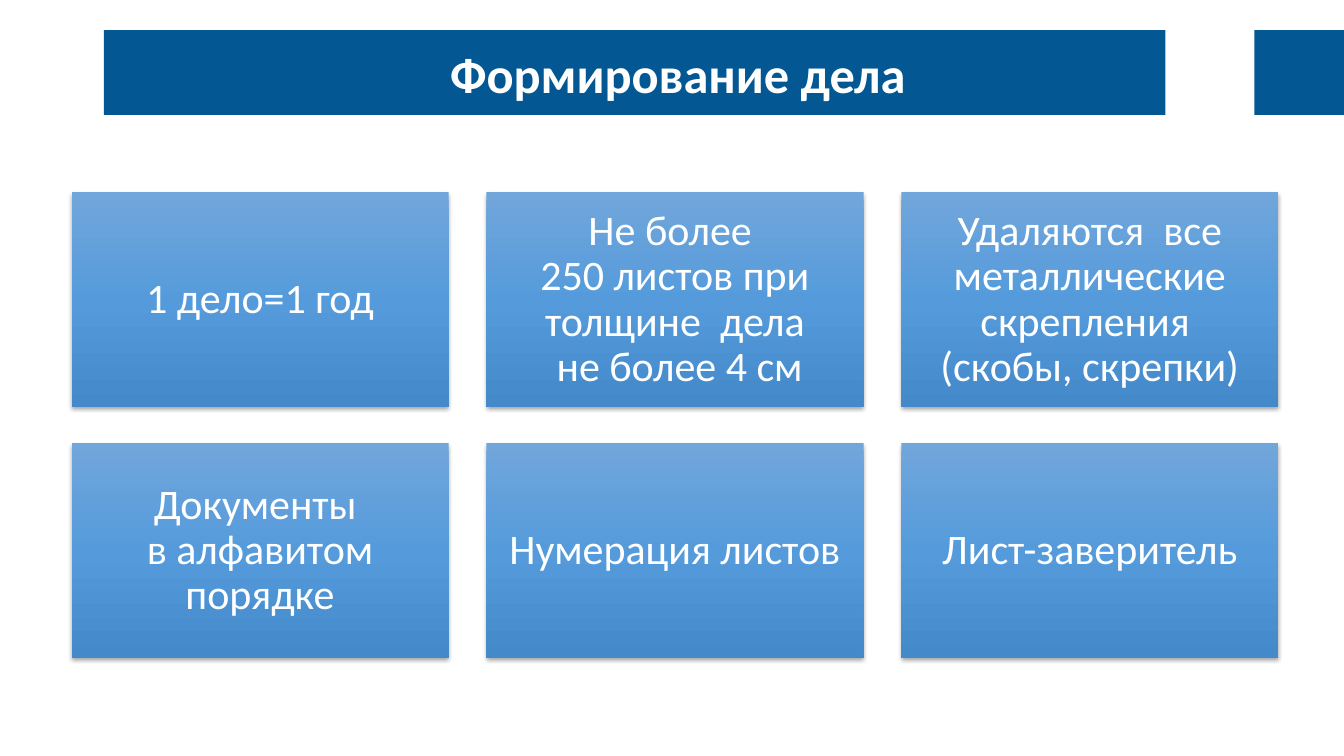
from copy import deepcopy
from dataclasses import dataclass

from pptx import Presentation
from pptx import util as u
from pptx.dml.color import RGBColor
from pptx.enum import shapes, text
from pptx.oxml import parse_xml
from pptx.oxml.ns import nsdecls, qn
from pptx.shapes.autoshape import Shape
from pptx.slide import Slide
from pptx.text.text import TextFrame

FONT = "Calibri"
WHITE = "FFFFFF"
BANNER_BLUE = "035793"
CARD_GRADIENT = [(0, "71A6DB"), (0.5, "559BDB"), (1, "448ACA")]

# Card grid
COLUMNS = 3
CARD_WIDTH, CARD_HEIGHT = 3.74, 2.13
GRID_LEFT, GRID_TOP = 0.71, 1.91
COLUMN_STEP, ROW_STEP = 4.115, 2.49
CARD_TEXTS = [
    "1 дело=1 год",
    "Не более \v250 листов при толщине  дела\v не более 4 см",
    "Удаляются  все металлические скрепления \v(скобы, скрепки)",
    "Документы \vв алфавитом порядке",
    "Нумерация листов",
    "Лист-заверитель",
]


@dataclass
class Box:
    left: float
    top: float
    width: float
    height: float

    def lengths(self) -> list[u.Length]:
        return [u.Inches(value) for value in (self.left, self.top, self.width, self.height)]


BANNERS = [Box(1.03, 0.3, 10.53, 0.84), Box(12.44, 0.3, 0.89, 0.84)]
TITLE = Box(1.91, 0.3, 9.63, 0.85)


def color(value: str) -> RGBColor:
    return RGBColor.from_string(value)


def add_rectangle(slide: Slide, box: Box) -> Shape:
    shape = slide.shapes.add_shape(shapes.MSO_SHAPE.RECTANGLE, *box.lengths())
    shape.shadow.inherit = False
    shape.line.fill.background()
    return shape


def write_text(frame: TextFrame, content: str, size: float, bold: bool = False) -> None:
    frame.text = content
    frame.word_wrap = True
    frame.auto_size = text.MSO_AUTO_SIZE.NONE
    frame.vertical_anchor = text.MSO_ANCHOR.MIDDLE
    paragraph = frame.paragraphs[0]
    paragraph.alignment = text.PP_ALIGN.CENTER
    for run in paragraph.runs:
        run.font.name = FONT
        run.font.size = u.Pt(size)
        run.font.bold = bold
        run.font.color.rgb = color(WHITE)


def fill_gradient(shape: Shape) -> None:
    shape.fill.gradient()
    stop_list = shape._element.spPr.find(".//" + qn("a:gsLst"))
    stop_list.append(deepcopy(stop_list[0]))
    for stop, (position, value) in zip(shape.fill.gradient_stops, CARD_GRADIENT):
        stop.position = position
        stop.color.rgb = color(value)
    shape.fill.gradient_angle = 270


def add_shadow(shape: Shape) -> None:
    effects = shape._element.spPr.find(qn("a:effectLst"))
    effects.append(parse_xml(
        f'<a:outerShdw {nsdecls("a")} blurRad="{u.Pt(3.1)}" dist="{u.Pt(1.8)}" '
        'dir="5400000" rotWithShape="0"><a:srgbClr val="000000">'
        '<a:alpha val="35000"/></a:srgbClr></a:outerShdw>'))


def add_card(slide: Slide, box: Box, content: str) -> None:
    card = add_rectangle(slide, box)
    fill_gradient(card)
    add_shadow(card)
    frame = card.text_frame
    write_text(frame, content, 30)
    frame.margin_left = frame.margin_right = u.Inches(0.13)
    frame.margin_top = frame.margin_bottom = u.Inches(0.13)
    frame.paragraphs[0].line_spacing = 0.9
    frame.paragraphs[0].space_after = u.Pt(10.5)


def main() -> None:
    presentation = Presentation()
    presentation.slide_width = u.Inches(13.33)
    presentation.slide_height = u.Inches(7.5)
    slide = presentation.slides.add_slide(presentation.slide_layouts[5])

    # Banner blocks
    for box in BANNERS:
        banner = add_rectangle(slide, box)
        banner.fill.solid()
        banner.fill.fore_color.rgb = color(BANNER_BLUE)

    # Title, brought in front of the banner
    title = slide.shapes.title
    title.left, title.top, title.width, title.height = TITLE.lengths()
    write_text(title.text_frame, "Формирование дела", 36, bold=True)
    slide.shapes._spTree.append(title._element)

    # Cards
    for index, content in enumerate(CARD_TEXTS):
        row, column = divmod(index, COLUMNS)
        box = Box(GRID_LEFT + column * COLUMN_STEP, GRID_TOP + row * ROW_STEP,
                  CARD_WIDTH, CARD_HEIGHT)
        add_card(slide, box, content)

    presentation.save("out.pptx")


if __name__ == "__main__":
    main()
